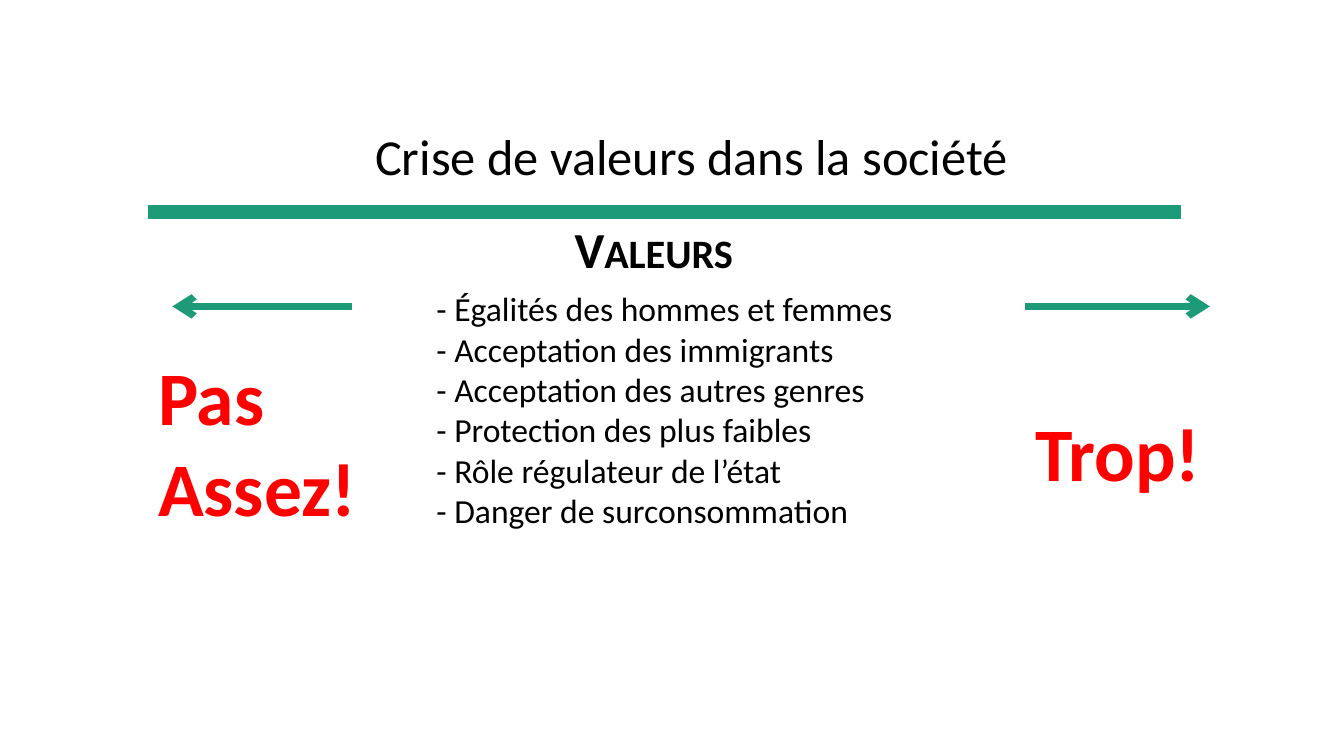
import dataclasses

import pptx
import pptx.dml.color
import pptx.enum.shapes
import pptx.enum.text
import pptx.oxml.ns
import pptx.util
from lxml import etree
from pptx.util import Inches


@dataclasses.dataclass(frozen=True)
class Theme:
    font: str = "Calibri"
    ink: str = "000000"
    accent: str = "1D9A78"
    alert: str = "FF0000"
    heading: int = 36
    body: int = 24
    verdict: int = 54
    rule: int = 10
    arrow: int = 5


THEME = Theme()
TITLE_BOX = (3.62, 1.19, 6.54, 0.71)
HEADING_BOX = (5.6, 2.11, 1.97, 0.71)
LIST_BOX = (4.23, 2.81, 5.36, 2.52)
NOT_ENOUGH_BOX = (1.47, 3.42, 2.52, 1.92)
TOO_MUCH_BOX = (10.17, 3.98, 2.03, 1.01)
ARROW_Y = 3.04
VALUES = [
    "Égalités des hommes et femmes",
    "Acceptation des immigrants",
    "Acceptation des autres genres",
    "Protection des plus faibles",
    "Rôle régulateur de l’état",
    "Danger de surconsommation",
]


def apply_format(target, values):
    for name, value in values.items():
        setattr(target, name, value)


def fill_text(shape, lines, size, color=THEME.ink, bold=False, wrap=True, small_caps=False):
    frame = shape.text_frame
    apply_format(frame, {
        "word_wrap": wrap,
        "auto_size": pptx.enum.text.MSO_AUTO_SIZE.SHAPE_TO_FIT_TEXT,
        "vertical_anchor": pptx.enum.text.MSO_ANCHOR.TOP,
    })
    for index, line in enumerate(lines):
        para = frame.add_paragraph() if index else frame.paragraphs[0]
        para.alignment = pptx.enum.text.PP_ALIGN.LEFT
        span = para.add_run()
        span.text = line
        apply_format(span.font, {"name": THEME.font, "size": pptx.util.Pt(size), "bold": bold})
        span.font.color.rgb = pptx.dml.color.RGBColor.from_string(color)
        if small_caps:
            span._r.get_or_add_rPr().set("cap", "small")


def add_title(page, box, text):
    title = page.shapes.title
    apply_format(title, dict(zip(("left", "top", "width", "height"), map(Inches, box))))
    fill_text(title, [text], THEME.heading, wrap=False)


def add_text(page, box, lines, size, **style):
    fill_text(page.shapes.add_textbox(*map(Inches, box)), lines, size, **style)


def add_line(page, start, end, y, width, arrow=False):
    """Draw a horizontal line, with an open arrowhead at its end if asked."""
    line = page.shapes.add_connector(
        pptx.enum.shapes.MSO_CONNECTOR.STRAIGHT, *map(Inches, (start, y, end, y)))
    line.line.color.rgb = pptx.dml.color.RGBColor.from_string(THEME.accent)
    line.line.width = pptx.util.Pt(width)
    if arrow:
        etree.SubElement(line.line._get_or_add_ln(), pptx.oxml.ns.qn("a:tailEnd"), type="arrow")
    etree.SubElement(line._element.spPr, pptx.oxml.ns.qn("a:effectLst"))


def add_values(page, heading_box, list_box):
    add_text(page, heading_box, ["Valeurs"], THEME.heading, bold=True, small_caps=True)
    add_text(page, list_box, [f"- {value}" for value in VALUES], THEME.body)


def add_verdict(page, box, text, arrow_start, arrow_end):
    """Place one extreme: an outward arrow above a red verdict."""
    left = box[0]
    add_line(page, left + arrow_start, left + arrow_end, ARROW_Y, THEME.arrow, arrow=True)
    add_text(page, box, [text], THEME.verdict, color=THEME.alert, bold=True)


def main():
    deck = pptx.Presentation()
    apply_format(deck, {"slide_width": Inches(13.33), "slide_height": Inches(7.5)})
    page = deck.slides.add_slide(deck.slide_layouts.get_by_name("Title Only"))
    add_title(page, TITLE_BOX, "Crise de valeurs dans la société")
    add_line(page, 1.47, 11.71, 2.1, THEME.rule)
    add_values(page, HEADING_BOX, LIST_BOX)
    add_verdict(page, NOT_ENOUGH_BOX, "Pas Assez!", 2.02, 0.24)
    add_verdict(page, TOO_MUCH_BOX, "Trop!", 0, 1.83)
    deck.save("out.pptx")


if __name__ == "__main__":
    main()
